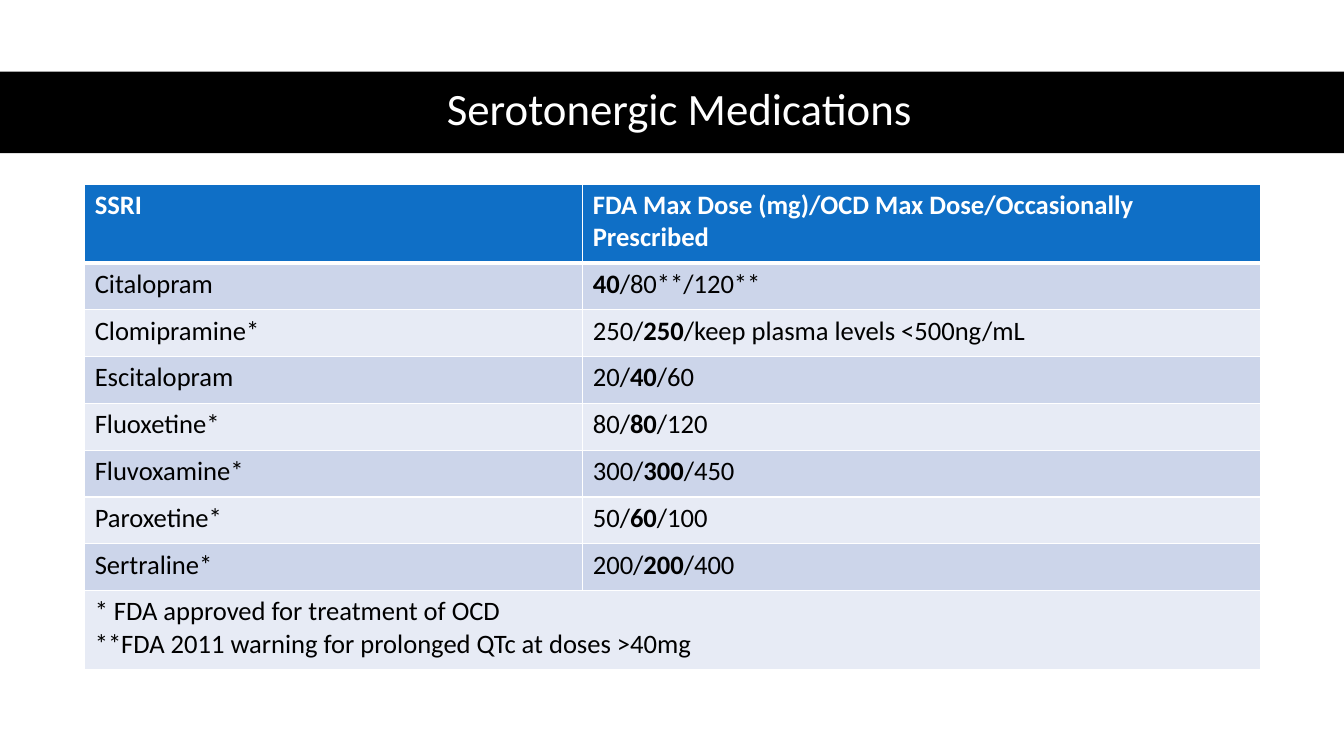
import pptx
import pptx.dml.color
import pptx.enum.shapes
import pptx.enum.text
import pptx.oxml
import pptx.oxml.ns
import pptx.util
from pptx.util import Inches

TITLE = "Serotonergic Medications"
HEADINGS = ("SSRI", "FDA Max Dose (mg)/OCD Max Dose/Occasionally Prescribed")
MEDICATIONS = [
    ("Citalopram", ("40", "80**", "120**"), 0),
    ("Clomipramine*", ("250", "250", "keep plasma levels <500ng/mL"), 1),
    ("Escitalopram", ("20", "40", "60"), 1),
    ("Fluoxetine*", ("80", "80", "120"), 1),
    ("Fluvoxamine*", ("300", "300", "450"), 1),
    ("Paroxetine*", ("50", "60", "100"), 1),
    ("Sertraline*", ("200", "200", "400"), 1),
]
FOOTNOTES = (
    "* FDA approved for treatment of OCD",
    "**FDA 2011 warning for prolonged QTc at doses >40mg",
)
COLORS = {
    "black": "000000",
    "white": "FFFFFF",
    "header": "0F6FC6",
    "odd": "CCD5EA",
    "even": "E7EBF5",
}
FONT = "Calibri"
BAND_TOP, BAND_HEIGHT = 0.71, 0.81
TABLE_LEFT, TABLE_TOP, TABLE_HEIGHT = 0.84, 1.83, 4.81
COLUMN_WIDTHS = (4.94, 6.72)
TWO_LINE_HEIGHT = 0.78


def color(name):
    """Return the named colour."""
    return pptx.dml.color.RGBColor.from_string(COLORS[name])


def add_run(paragraph, text, size, ink, bold=False):
    """Add one formatted run."""
    run = paragraph.add_run()
    run.text = text
    run.font.name = FONT
    run.font.size = pptx.util.Pt(size)
    run.font.bold = bold
    run.font.color.rgb = color(ink)


def style_cell(cell, fill, bottom_width):
    """Set the margins, white borders and fill of a cell."""
    cell.margin_left = cell.margin_right = Inches(0.1)
    cell.margin_top = cell.margin_bottom = Inches(0.05)
    properties = cell._tc.get_or_add_tcPr()
    for side, width in (("L", 1), ("R", 1), ("T", 1), ("B", bottom_width)):
        properties.append(pptx.oxml.parse_xml(
            f'<a:ln{side} {pptx.oxml.ns.nsdecls("a")} w="{pptx.util.Pt(width)}">'
            f'<a:solidFill><a:srgbClr val="{COLORS["white"]}"/></a:solidFill>'
            f'</a:ln{side}>'
        ))
    cell.fill.solid()
    cell.fill.fore_color.rgb = color(fill)


def write_cell(cell, lines, ink="black"):
    """Write lines of (text, bold) runs into a cell."""
    frame = cell.text_frame
    for index, line in enumerate(lines):
        paragraph = frame.add_paragraph() if index else frame.paragraphs[0]
        for text, bold in line:
            add_run(paragraph, text, 19, ink, bold)


def dose_runs(doses, bold_index):
    """Join doses with slashes, keeping one dose bold."""
    before = "".join(dose + "/" for dose in doses[:bold_index])
    after = "".join("/" + dose for dose in doses[bold_index + 1:])
    runs = [(before, False), (doses[bold_index], True), (after, False)]
    return [run for run in runs if run[0]]


def add_title(slide, slide_width):
    """Add the black band and the title."""
    band = slide.shapes.add_shape(
        pptx.enum.shapes.MSO_SHAPE.RECTANGLE,
        0, Inches(BAND_TOP), slide_width, Inches(BAND_HEIGHT))
    band.shadow.inherit = False
    band.fill.solid()
    band.fill.fore_color.rgb = color("black")
    band.line.fill.background()
    title = slide.shapes.add_textbox(
        Inches(0.61), Inches(0.7), Inches(12.26), Inches(BAND_HEIGHT))
    frame = title.text_frame
    frame.word_wrap = True
    frame.vertical_anchor = pptx.enum.text.MSO_ANCHOR.MIDDLE
    paragraph = frame.paragraphs[0]
    paragraph.alignment = pptx.enum.text.PP_ALIGN.CENTER
    paragraph.line_spacing = 0.9
    add_run(paragraph, TITLE, 32, "white")


def add_medications(slide):
    """Add the table of medications and doses."""
    row_count = len(MEDICATIONS) + 2
    last = row_count - 1
    table = slide.shapes.add_table(
        row_count, len(COLUMN_WIDTHS), Inches(TABLE_LEFT), Inches(TABLE_TOP),
        Inches(sum(COLUMN_WIDTHS)), Inches(TABLE_HEIGHT)).table
    for column, width in zip(table.columns, COLUMN_WIDTHS):
        column.width = Inches(width)
    dose_height = (TABLE_HEIGHT - 2 * TWO_LINE_HEIGHT) / len(MEDICATIONS)
    for index, row in enumerate(table.rows):
        row.height = Inches(TWO_LINE_HEIGHT if index in (0, last) else dose_height)
        fill = "header" if index == 0 else "odd" if index % 2 else "even"
        for cell in row.cells:
            style_cell(cell, fill, 1 if index else 3)
    for column, heading in enumerate(HEADINGS):
        write_cell(table.cell(0, column), [[(heading, True)]], "white")
    for index, (medication, doses, bold_index) in enumerate(MEDICATIONS, 1):
        write_cell(table.cell(index, 0), [[(medication, False)]])
        write_cell(table.cell(index, 1), [dose_runs(doses, bold_index)])
    table.cell(last, 0).merge(table.cell(last, 1))
    write_cell(table.cell(last, 0), [[(note, False)] for note in FOOTNOTES])


def main():
    """Build and save the slide."""
    presentation = pptx.Presentation()
    presentation.slide_width = Inches(13.33)
    presentation.slide_height = Inches(7.5)
    slide = presentation.slides.add_slide(presentation.slide_layouts[6])
    add_title(slide, presentation.slide_width)
    add_medications(slide)
    presentation.save("out.pptx")


if __name__ == "__main__":
    main()
